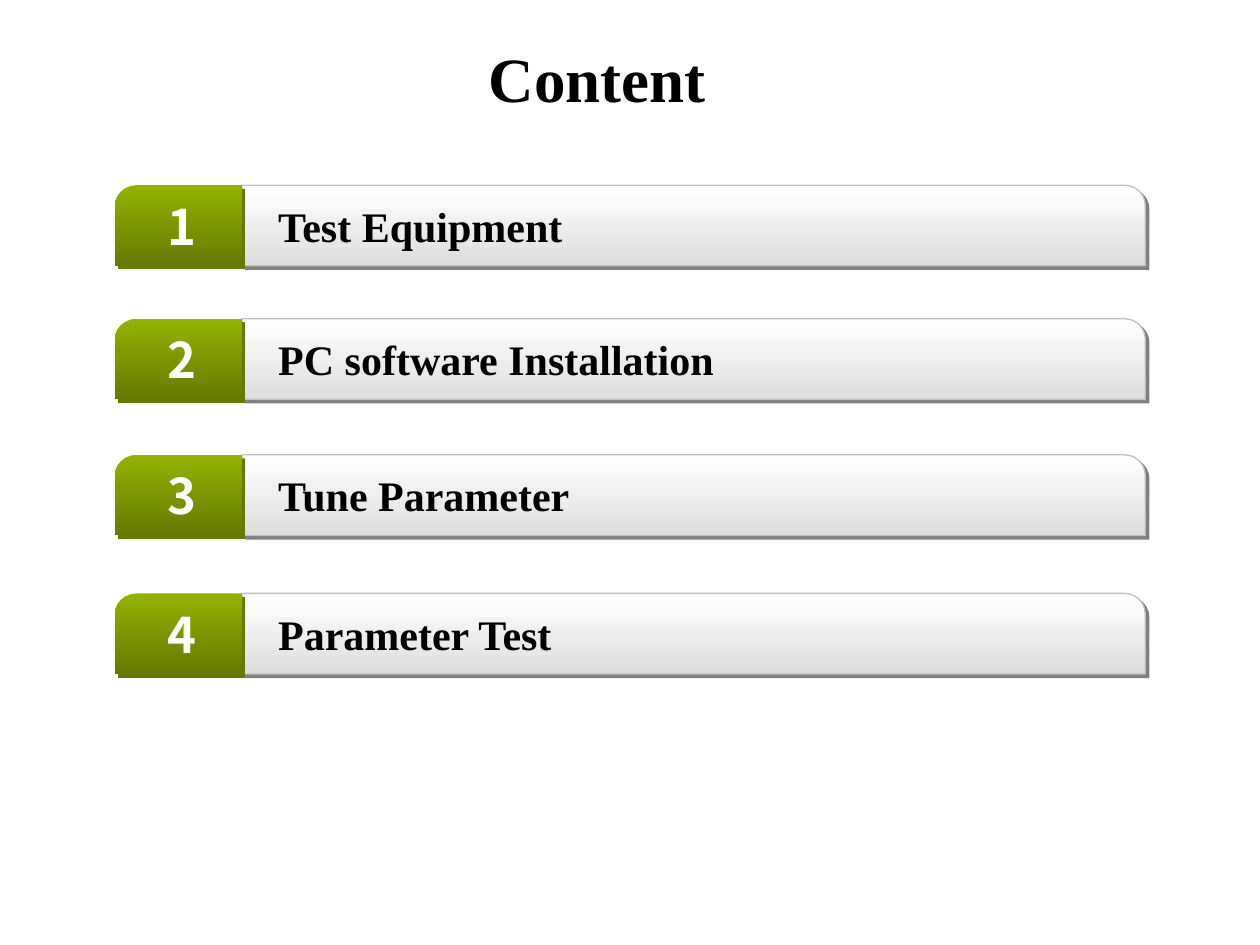
from dataclasses import dataclass

from lxml.etree import SubElement
from pptx import Presentation
from pptx.dml.color import RGBColor
from pptx.enum.shapes import MSO_SHAPE
from pptx.enum.text import MSO_ANCHOR, PP_ALIGN
from pptx.oxml.ns import qn
from pptx.util import Inches, Pt


@dataclass(frozen=True)
class Theme:
    serif: str = "Times New Roman"
    sans: str = "Noto Sans CJK SC"
    ink: str = "000000"
    white: str = "FFFFFF"
    silver: str = "DDDDDD"
    edge: str = "BFBFBF"
    gray: str = "808080"
    lime: str = "94B200"
    olive: str = "667A00"
    head: int = 36
    label: int = 24
    digit: int = 28


THEME = Theme()

# Each item with the top of its row, in inches
ITEMS = [
    ("Test Equipment", 1.47),
    ("PC software Installation", 2.53),
    ("Tune Parameter", 3.61),
    ("Parameter Test", 4.71),
]
LEFT, TAB, BAR, HIGH = 0.91, 1.01, 7.17, 0.64


def add_run(para, text, font, size, color):
    run = para.add_run()
    run.text = text
    run.font.name = font
    run.font.size = Pt(size)
    run.font.bold = True
    run.font.color.rgb = RGBColor.from_string(color)


def add_shadow(shape, color):
    shape.shadow.inherit = False
    effects = shape._element.spPr.find(qn("a:effectLst"))
    outer = SubElement(effects, qn("a:outerShdw"), dist=str(Pt(2.8)),
                       dir="2700000", algn="tl", rotWithShape="0")
    SubElement(outer, qn("a:srgbClr"), val=color)


def add_panel(slide, left, top, width, bend, colors, shade):
    """Add a box with one round corner, a downward gradient and a shadow."""
    panel = slide.shapes.add_shape(MSO_SHAPE.ROUND_1_RECTANGLE, Inches(left),
                                   Inches(top), Inches(width), Inches(HIGH))
    panel.adjustments[0] = bend
    panel.fill.gradient()
    panel.fill.gradient_angle = 270
    for stop, color, place in zip(panel.fill.gradient_stops, colors, (0, 1)):
        stop.color.rgb = RGBColor.from_string(color)
        stop.position = place
    panel.line.fill.background()
    add_shadow(panel, shade)
    panel.text_frame.vertical_anchor = MSO_ANCHOR.MIDDLE
    return panel


def add_bar(slide, text, top):
    bar = add_panel(slide, LEFT + TAB, top, BAR, 0.255,
                    (THEME.white, THEME.silver), THEME.gray)
    bar.line.color.rgb = RGBColor.from_string(THEME.edge)
    bar.line.width = Pt(0.75)
    para = bar.text_frame.paragraphs[0]
    para.alignment = PP_ALIGN.LEFT
    para._p.get_or_add_pPr().set("marL", str(Inches(0.19)))
    add_run(para, text, THEME.serif, THEME.label, THEME.ink)


def add_tab(slide, number, top):
    tab = add_panel(slide, LEFT, top, TAB, 0.271,
                    (THEME.lime, THEME.olive), THEME.olive)
    tab._element.spPr.xfrm.set("flipH", "1")
    para = tab.text_frame.paragraphs[0]
    para.alignment = PP_ALIGN.CENTER
    add_run(para, str(number), THEME.sans, THEME.digit, THEME.white)


def set_title(slide, text):
    title = slide.shapes.title
    title.left, title.top = Inches(0.12), Inches(0.21)
    title.width, title.height = Inches(9.24), Inches(0.8)
    title.text_frame.vertical_anchor = MSO_ANCHOR.MIDDLE
    para = title.text_frame.paragraphs[0]
    para.alignment = PP_ALIGN.CENTER
    add_run(para, text, THEME.serif, THEME.head, THEME.ink)


def main():
    deck = Presentation()
    deck.slide_width, deck.slide_height = Inches(10), Inches(7.5)
    slide = deck.slides.add_slide(deck.slide_layouts[5])

    # Title
    set_title(slide, "Content")

    # Numbered rows
    for number, (text, top) in enumerate(ITEMS, 1):
        add_bar(slide, text, top)
        add_tab(slide, number, top)

    deck.save("out.pptx")


if __name__ == "__main__":
    main()
